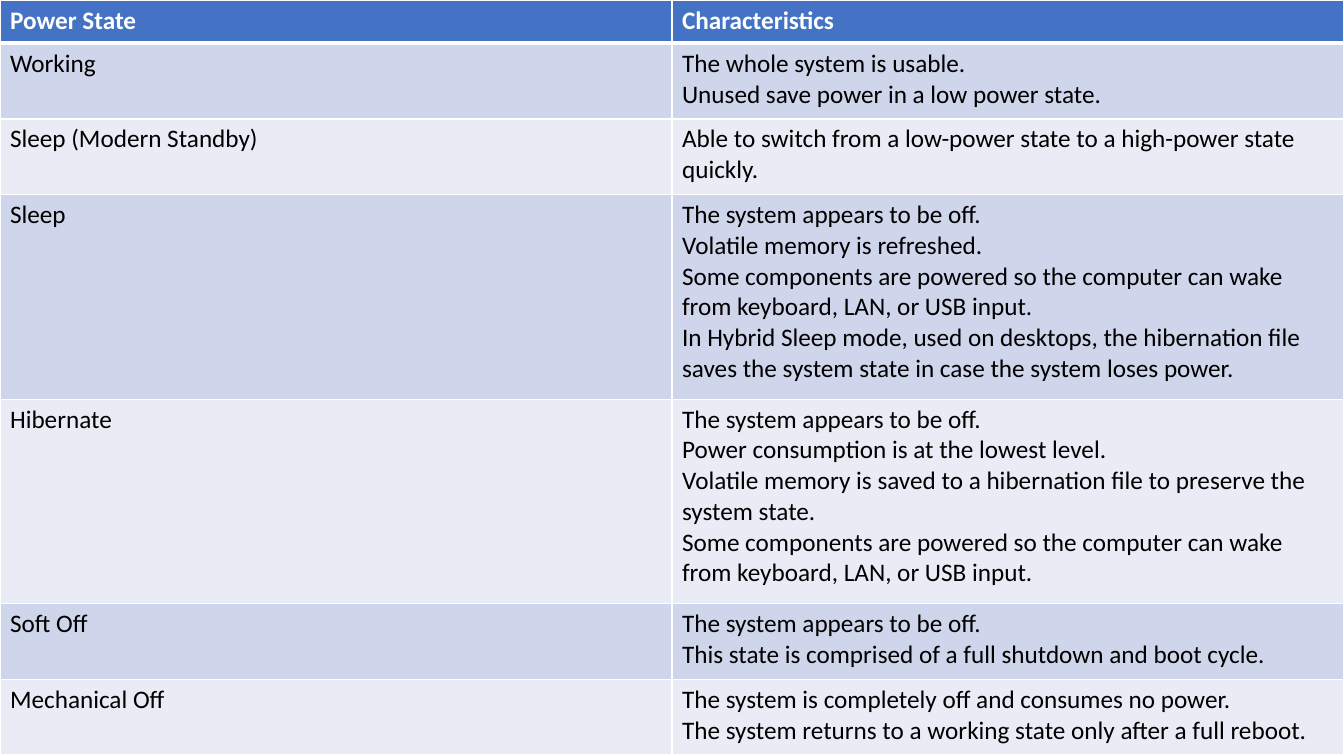
"""Build a slide with a table of system power states."""
from lxml import etree
from pptx import Presentation, util as u
from pptx.dml.color import RGBColor
from pptx.oxml import ns

WIDTH, HEIGHT = u.Inches(13.33), u.Inches(7.5)
LINE, PADDING = u.Inches(0.32), u.Inches(0.11)
FONT = "Calibri"
HEADER_FILL = RGBColor(0x44, 0x72, 0xC4)
BAND_FILLS = (RGBColor(0xE9, 0xEB, 0xF5), RGBColor(0xCF, 0xD5, 0xEA))
WHITE = RGBColor(0xFF, 0xFF, 0xFF)
BLACK = RGBColor(0x00, 0x00, 0x00)

OFF = "The system appears to be off."
WAKE = "Some components are powered so the computer can wake from keyboard, LAN, or USB input."
HEADINGS = ("Power State", "Characteristics")
STATES = (
    ("Working", 2, ("The whole system is usable.",
                    "Unused save power in a low power state.")),
    ("Sleep (Modern Standby)", 2, (
        "Able to switch from a low-power state to a high-power state quickly.",)),
    ("Sleep", 6, (
        OFF, "Volatile memory is refreshed.", WAKE,
        "In Hybrid Sleep mode, used on desktops, the hibernation file saves "
        "the system state in case the system loses power.")),
    ("Hibernate", 6, (
        OFF, "Power consumption is at the lowest level.",
        "Volatile memory is saved to a hibernation file to preserve the system state.",
        WAKE)),
    ("Soft Off", 2, (
        OFF, "This state is comprised of a full shutdown and boot cycle.")),
    ("Mechanical Off", 2, (
        "The system is completely off and consumes no power.",
        "The system returns to a working state only after a full reboot.")),
)


def write_text(frame, lines, size=18, color=BLACK, bold=False):
    """Write each line as a formatted paragraph."""
    for index, line in enumerate(lines):
        paragraph = frame.add_paragraph() if index else frame.paragraphs[0]
        run = paragraph.add_run()
        run.text = line
        run.font.name, run.font.size = FONT, u.Pt(size)
        run.font.bold, run.font.color.rgb = bold, color


def set_borders(cell, color=WHITE, top=1, bottom=1):
    """Draw the four cell borders, with widths in points."""
    properties = cell._tc.get_or_add_tcPr()
    sides = (("a:lnL", 1), ("a:lnR", 1), ("a:lnT", top), ("a:lnB", bottom))
    for index, (tag, width) in enumerate(sides):
        border = etree.Element(ns.qn(tag), w=str(u.Pt(width)))
        fill = etree.SubElement(border, ns.qn("a:solidFill"))
        etree.SubElement(fill, ns.qn("a:srgbClr"), val=str(color))
        properties.insert(index, border)


def fill_row(table, index, line_count, texts, fill, borders, **text_format):
    """Set the height, fill, borders and text of one table row."""
    table.rows[index].height = PADDING + LINE * line_count
    for cell, lines in zip(table.rows[index].cells, texts):
        cell.fill.solid()
        cell.fill.fore_color.rgb = fill
        set_borders(cell, **borders)
        write_text(cell.text_frame, lines, **text_format)


def add_state_table(slide):
    """Add the table of power states over the whole slide."""
    table = slide.shapes.add_table(
        len(STATES) + 1, len(HEADINGS), 0, 0, WIDTH, HEIGHT).table
    fill_row(table, 0, 1, [[heading] for heading in HEADINGS], HEADER_FILL,
             {"bottom": 3}, color=WHITE, bold=True)
    for index, (state, line_count, traits) in enumerate(STATES, start=1):
        fill_row(table, index, line_count, ([state], traits),
                 BAND_FILLS[index % 2], {"top": 3 if index == 1 else 1})


def main():
    """Create the presentation and save it."""
    presentation = Presentation()
    presentation.slide_width, presentation.slide_height = WIDTH, HEIGHT
    slide = presentation.slides.add_slide(presentation.slide_layouts[6])
    add_state_table(slide)
    presentation.save("out.pptx")


if __name__ == "__main__":
    main()
